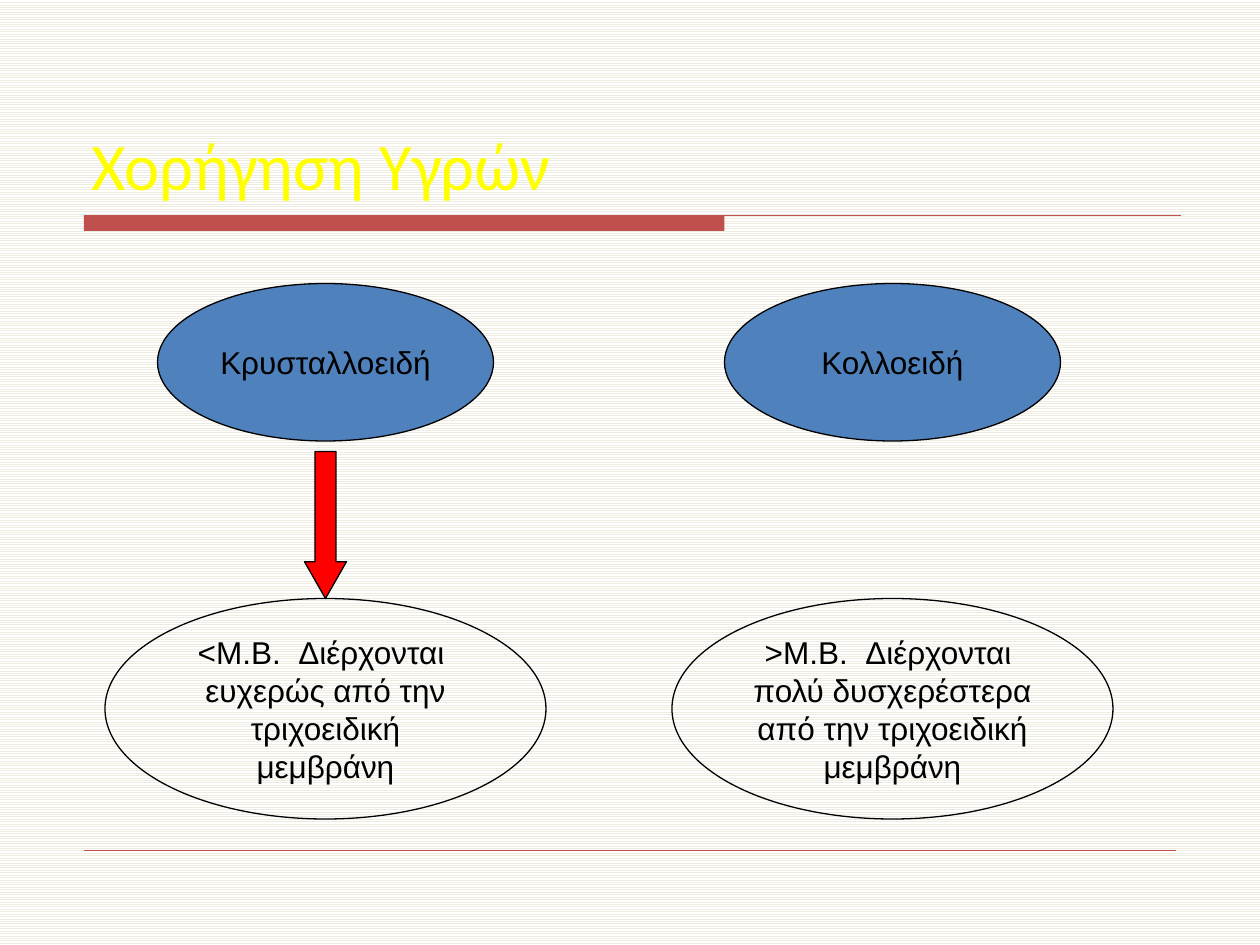
from lxml import etree
from pptx import Presentation
from pptx.dml.color import RGBColor
from pptx.enum.dml import MSO_PATTERN
from pptx.enum.shapes import MSO_CONNECTOR, MSO_SHAPE
from pptx.enum.text import MSO_ANCHOR, PP_ALIGN
from pptx.oxml.ns import qn
from pptx.util import Inches, Pt

STRIPES = MSO_PATTERN.LIGHT_HORIZONTAL
STRAIGHT = MSO_CONNECTOR.STRAIGHT
OVAL, ARROW, RECT = MSO_SHAPE.OVAL, MSO_SHAPE.DOWN_ARROW, MSO_SHAPE.RECTANGLE
MIDDLE, BOTTOM = MSO_ANCHOR.MIDDLE, MSO_ANCHOR.BOTTOM
LEFT, CENTER = PP_ALIGN.LEFT, PP_ALIGN.CENTER

COLS, ROWS = 120, 90
BLACK, BLUE, RED, BRICK = "000000", "4F81BD", "FF0000", "C0504D"


def color(code):
    return RGBColor.from_string(code)


class Board:
    """Draws on one slide; boxes are (column, row, columns wide, rows high)."""

    def __init__(self, deck):
        self.unit_x = deck.slide_width / COLS
        self.unit_y = deck.slide_height / ROWS
        self.slide = deck.slides.add_slide(deck.slide_layouts[5])
        self.shapes = self.slide.shapes

    def place(self, box):
        x, y, wide, high = box
        return (round(x * self.unit_x), round(y * self.unit_y),
                round(wide * self.unit_x), round(high * self.unit_y))

    def paper(self, fore, back):
        fill = self.slide.background.fill
        fill.patterned()
        fill.pattern = STRIPES
        fill.fore_color.rgb = color(fore)
        fill.back_color.rgb = color(back)

    def label(self, shape, text, font, size, ink, align, anchor, wrap=True):
        frame = shape.text_frame
        frame.text = text
        frame.word_wrap = wrap
        frame.vertical_anchor = anchor
        para = frame.paragraphs[0]
        para.alignment = align
        style = para.runs[0].font
        style.name, style.size = font, Pt(size)
        style.color.rgb = color(ink)

    def title(self, text, box):
        shape = self.shapes.title
        shape.left, shape.top, shape.width, shape.height = self.place(box)
        self.label(shape, text, "Calibri", 38, "FFFF00", LEFT, BOTTOM)

    def shape(self, kind, box, fill=None, line=BLACK):
        shape = self.shapes.add_shape(kind, *self.place(box))
        shape.shadow.inherit = False
        if fill:
            shape.fill.solid()
            shape.fill.fore_color.rgb = color(fill)
        else:
            shape.fill.background()
        if line:
            shape.line.color.rgb = color(line)
            shape.line.width = Pt(0.75)
        else:
            shape.line.fill.background()
        return shape

    def oval(self, text, box, fill=None, wrap=True):
        shape = self.shape(OVAL, box, fill)
        self.label(shape, text, "Arial", 18, BLACK, CENTER, MIDDLE, wrap)

    def arrow(self, box):
        shape = self.shape(ARROW, box, RED)
        shape.adjustments[1] = 0.875

    def rule(self, x, y, wide, weight):
        left, top, span, _ = self.place((x, y, wide, 0))
        line = self.shapes.add_connector(STRAIGHT, left, top, left + span, top)
        line.line.color.rgb = color(BRICK)
        line.line.width = Pt(weight)
        etree.SubElement(line._element.spPr, qn("a:effectLst"))


def main():
    deck = Presentation()
    deck.slide_width, deck.slide_height = Inches(10), Inches(7.5)
    board = Board(deck)
    board.paper("EEECE1", "FFFFFF")
    board.shape(RECT, (8, 20.5, 61, 1.5), BRICK, None)
    board.rule(8, 20.5, 104.5, 0.75)
    board.rule(8, 81, 104, 0.25)
    board.title("Χορήγηση Υγρών", (7.5, 4, 105, 16))

    fluids = [
        ("Κρυσταλλοειδή",
         "<M.B.  Διέρχονται  ευχερώς από την τριχοειδική μεμβράνη"),
        ("Κολλοειδή",
         ">M.B.  Διέρχονται  πολύ δυσχερέστερα από την τριχοειδική μεμβράνη"),
    ]
    first, step = 31, 54
    for i, (name, trait) in enumerate(fluids):
        mid = first + i * step
        board.oval(name, (mid - 16, 27, 32, 15), BLUE, wrap=False)
        board.oval(trait, (mid - 21, 57, 42, 21))
    board.arrow((first - 2, 43, 4, 14))
    deck.save("out.pptx")


if __name__ == "__main__":
    main()
